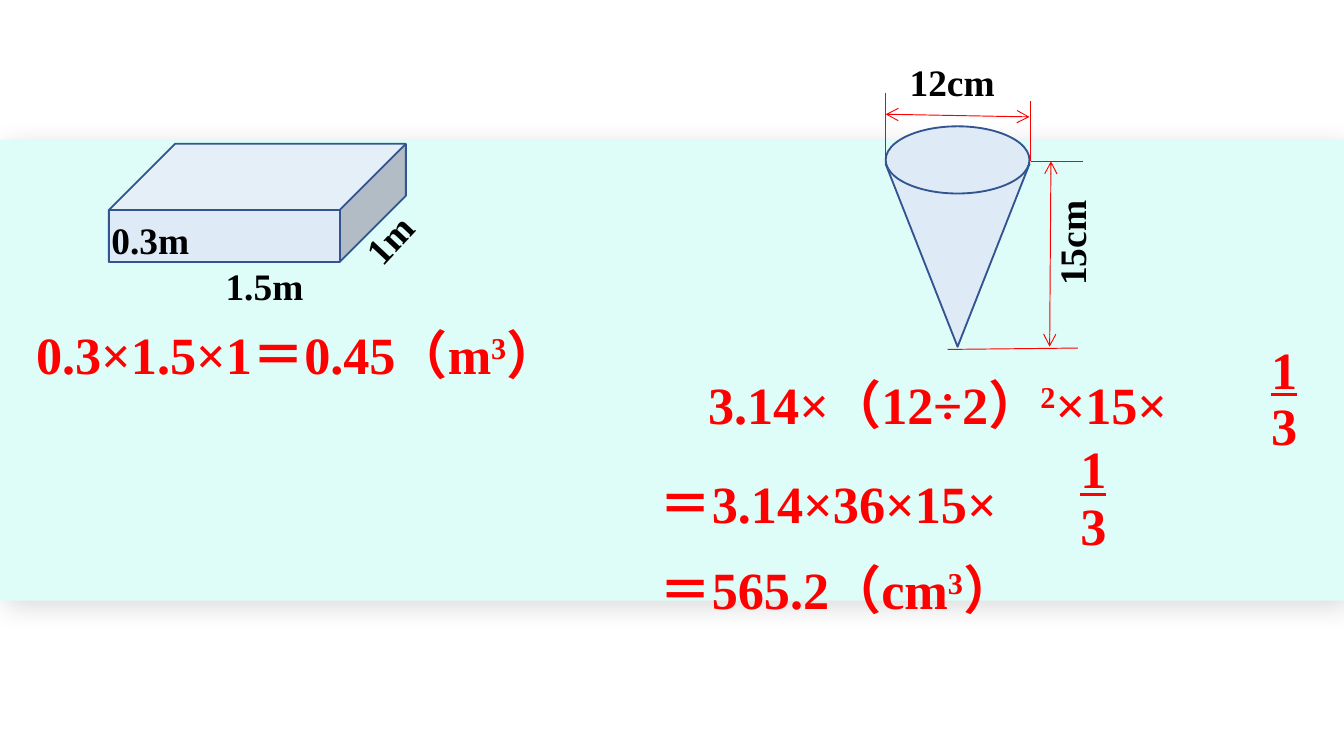
from lxml.etree import SubElement
from pptx import Presentation
from pptx.dml.color import RGBColor
from pptx.enum.shapes import MSO_CONNECTOR, MSO_SHAPE as Preset
from pptx.enum.text import MSO_AUTO_SIZE as AutoSize
from pptx.oxml.ns import qn
from pptx.util import Inches, Pt

CELL = Inches(0.01)
COLUMNS, ROWS = 1000, 562.5
LATIN, CJK = "Times New Roman", "Noto Sans CJK SC"
BLACK, RED, OUTLINE = "000000", "FF0000", "325491"
PALE_BLUE, MINT = "DEEBF7", "DEFDF8"


def rgb(value):
    return RGBColor.from_string(value)


def cells(*counts):
    return [int(count * CELL) for count in counts]


def add_solid(slide, preset, box, fill, outline=None):
    solid = slide.shapes.add_shape(preset, *cells(*box))
    solid.shadow.inherit = False
    solid.fill.solid()
    solid.fill.fore_color.rgb = rgb(fill)
    if outline:
        solid.line.color.rgb = rgb(outline)
        solid.line.width = Pt(1)
    else:
        solid.line.fill.background()
    return solid


def add_rule(slide, start, end, arrows=False):
    rule = slide.shapes.add_connector(
        MSO_CONNECTOR.STRAIGHT, *cells(*start, *end))
    rule.line.color.rgb = rgb(RED)
    rule.line.width = Pt(0.5)
    properties = rule._element.spPr
    if arrows:
        for tip in ("a:headEnd", "a:tailEnd"):
            SubElement(properties.find(qn("a:ln")), qn(tip), type="arrow")
    SubElement(properties, qn("a:effectLst"))


def style(paragraph, size, color):
    paragraph.font.size = Pt(size)
    paragraph.font.bold = True
    paragraph.font.name = LATIN
    paragraph.font.color.rgb = rgb(color)
    defaults = paragraph._p.pPr.find(qn("a:defRPr"))
    SubElement(defaults, qn("a:ea"), typeface=CJK)


def add_words(slide, box, size, color, wrap=True, grow=True):
    words = slide.shapes.add_textbox(*cells(*box))
    frame = words.text_frame
    frame.word_wrap = wrap
    frame.auto_size = AutoSize.SHAPE_TO_FIT_TEXT if grow else AutoSize.NONE
    style(frame.paragraphs[0], size, color)
    return words


def add_label(slide, box, measure, wrap=True, turn=0):
    label = add_words(slide, box, 20, BLACK, wrap)
    label.text_frame.paragraphs[0].add_run().text = measure
    label.rotation = turn


def add_equation(slide, box, parts, wrap=True, grow=True):
    equation = add_words(slide, box, 28, RED, wrap, grow)
    for index, part in enumerate(parts):
        run = equation.text_frame.paragraphs[0].add_run()
        run.text = part
        if index % 2:
            run._r.get_or_add_rPr().set("baseline", "30000")


def add_third(slide, left, top):
    fraction = add_words(slide, (left, top, 39, 95), 28, RED, wrap=False)
    numerator = fraction.text_frame.paragraphs[0]
    denominator = fraction.text_frame.add_paragraph()
    style(denominator, 28, RED)
    for line, digit in ((numerator, "1"), (denominator, "3")):
        line.line_spacing = 0.9
        line.add_run().text = digit
    numerator.font.underline = True


def add_band(slide, box):
    band = add_solid(slide, Preset.RECTANGLE, box, MINT)
    effects = band._element.spPr.find(qn("a:effectLst"))
    shadow = SubElement(effects, qn("a:outerShdw"), blurRad=str(Pt(15)),
                        dist=str(Pt(5)), dir="2700000", algn="ctr",
                        rotWithShape="0")
    tint = SubElement(shadow, qn("a:srgbClr"), val=BLACK)
    SubElement(tint, qn("a:alpha"), val="15000")


def add_cuboid(slide, box):
    left, top, width, height = box
    cuboid = add_solid(slide, Preset.CUBE, box, PALE_BLUE, OUTLINE)
    cuboid.adjustments[0] = 0.56
    add_label(slide, (left - 8, top + 50, 78, 44), "0.3m", wrap=False)
    add_label(slide, (left + 77, top + 84, 78, 44), "1.5m", wrap=False)
    add_label(slide, (left + 180, top + 49, 57, 44), "1m", False, 313)


def add_cone(slide, box):
    left, top, width, height = box
    right, bottom, rim = left + width, top + height, top + 26
    body = add_solid(slide, Preset.ISOSCELES_TRIANGLE,
                     (left, top + 28, width, height - 28), PALE_BLUE, OUTLINE)
    body.rotation = 180
    add_solid(slide, Preset.OVAL, (left, top, width, 50), PALE_BLUE, OUTLINE)
    add_rule(slide, (right + 16, rim), (right + 15, bottom), arrows=True)
    add_rule(slide, (right + 40, rim), (right + 1, rim))
    add_rule(slide, (right + 36, bottom + 1), (left + 46, bottom + 2))
    add_label(slide, (right - 20, top + 55, 103, 44), "15cm", turn=270)
    add_label(slide, (left + 8, top - 55, 123, 44), "12cm")
    add_rule(slide, (left, top - 9), (right, top - 7), arrows=True)
    add_rule(slide, (left, top - 25), (left, rim - 1))
    add_rule(slide, (right + 1, top - 19), (right + 1, rim))


def add_cone_working(slide, left, top):
    add_equation(slide, (left, top + 138, 293, 57), ["＝565.2（cm", "3", "）"])
    add_equation(slide, (left + 36, top, 433, 57),
                 ["3.14×（12÷2）", "2", "×15×"], wrap=False)
    add_third(slide, left + 455, top - 21)
    add_equation(slide, (left, top + 74, 371, 57), ["＝3.14×36×15×"])
    add_third(slide, left + 313, top + 53)


def main():
    deck = Presentation()
    deck.slide_width, deck.slide_height = cells(COLUMNS, ROWS)
    slide = deck.slides.add_slide(deck.slide_layouts[6])
    add_band(slide, (0, 104, COLUMNS, 343))
    add_cuboid(slide, (81, 107, 221, 88))
    add_equation(slide, (17, 235, 436, 57),
                 ["0.3×1.5×1＝0.45（m", "3", "）"], grow=False)
    add_cone(slide, (659, 94, 107, 164))
    add_cone_working(slide, 481, 272)
    deck.save("out.pptx")


if __name__ == "__main__":
    main()
